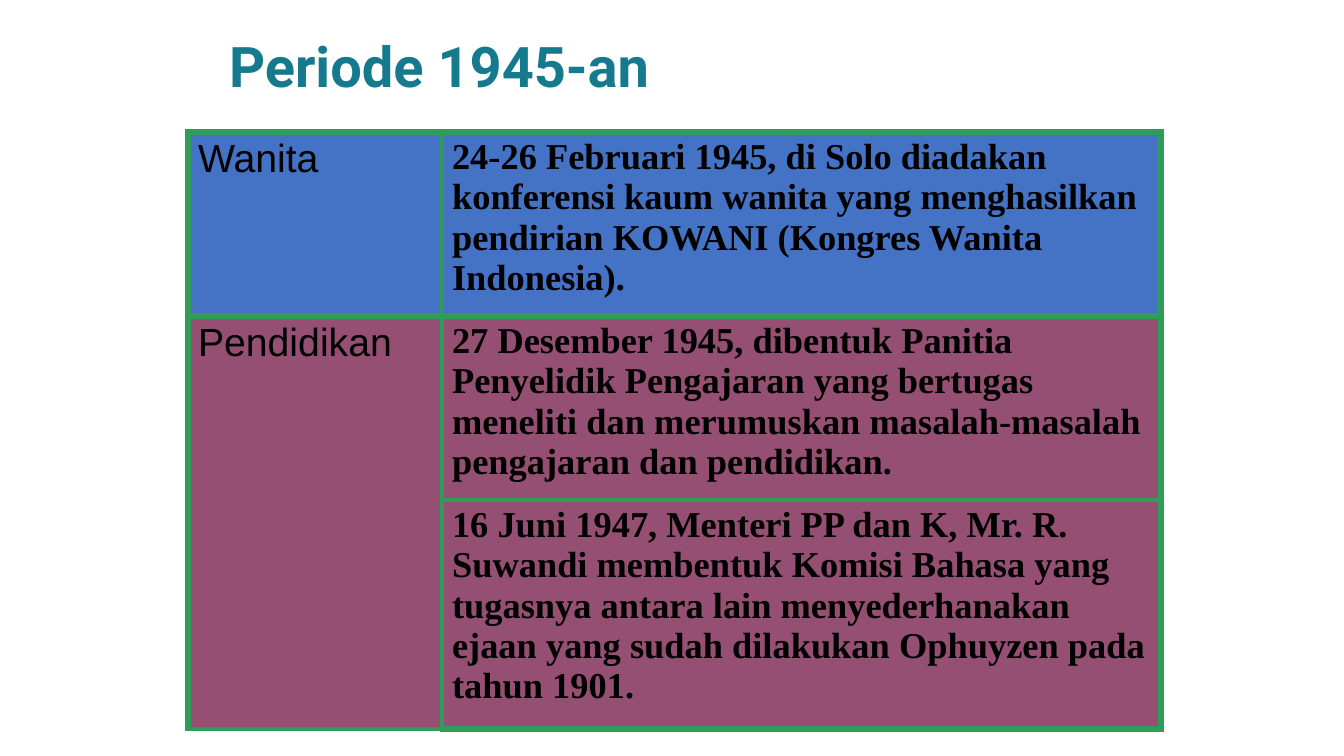
import pptx
import pptx.util
import pptx.dml.color
import pptx.enum.text
import pptx.oxml.ns
from lxml import etree

TITLE = "Periode 1945-an"
ROWS = [
    ("Wanita",
     "24-26 Februari 1945, di Solo diadakan konferensi kaum wanita yang menghasilkan "
     "pendirian KOWANI (Kongres Wanita Indonesia).", "blue"),
    ("Pendidikan",
     "27 Desember 1945, dibentuk Panitia Penyelidik Pengajaran yang bertugas meneliti "
     "dan merumuskan masalah-masalah pengajaran dan pendidikan.", "plum"),
    ("",
     "16 Juni 1947, Menteri PP dan K, Mr. R. Suwandi membentuk Komisi Bahasa yang "
     "tugasnya antara lain menyederhanakan ejaan yang sudah dilakukan Ophuyzen pada "
     "tahun 1901.", "plum"),
]
COLORS = {"title": "167A8E", "text": "000000", "border": "2F9D59",
          "blue": "4472C4", "plum": "954F72"}
COLUMN_FONTS = [("Arial", 28, False), ("Times New Roman", 26, True)]
COLUMN_WIDTHS = [254, 719]
ROW_HEIGHTS = [184, 184, 229]
THICK, THIN = 4.5, 3


def px(n):
    return pptx.util.Emu(round(n * 914400 / 100.8))


def rgb(name):
    return pptx.dml.color.RGBColor.from_string(COLORS[name])


def add_run(p, text, font, size, bold, color):
    r = p.add_run()
    r.text = text
    r.font.name = font
    r.font.size = pptx.util.Pt(size)
    r.font.bold = bold
    r.font.color.rgb = rgb(color)


def set_borders(cell, widths):
    tcPr = cell._tc.get_or_add_tcPr()
    qn = pptx.oxml.ns.qn
    for i, (side, width) in enumerate(widths.items()):
        ln = etree.Element(qn("a:ln" + side), w=str(pptx.util.Pt(width)))
        fill = etree.SubElement(ln, qn("a:solidFill"))
        etree.SubElement(fill, qn("a:srgbClr"), val=COLORS["border"])
        tcPr.insert(i, ln)


prs = pptx.Presentation()
prs.slide_width, prs.slide_height = px(1344), px(756)
s = prs.slides.add_slide(prs.slide_layouts[5])

title = s.shapes.title
title.left, title.top, title.width, title.height = px(219), px(30), px(907), px(78)
tf = title.text_frame
tf.word_wrap = True
tf.vertical_anchor = pptx.enum.text.MSO_ANCHOR.MIDDLE
p = tf.paragraphs[0]
p.alignment = pptx.enum.text.PP_ALIGN.LEFT
p.line_spacing = 0.9
add_run(p, TITLE, "Roboto", 40, True, "title")

table = s.shapes.add_table(len(ROWS), len(COLUMN_WIDTHS), px(188), px(132),
                           px(sum(COLUMN_WIDTHS)), px(sum(ROW_HEIGHTS))).table
table.first_row = table.horz_banding = False
for column, width in zip(table.columns, COLUMN_WIDTHS):
    column.width = px(width)
for row, height in zip(table.rows, ROW_HEIGHTS):
    row.height = px(height)

for i, (topic, event, fill) in enumerate(ROWS):
    for j, text in enumerate((topic, event)):
        cell = table.cell(i, j)
        cell.fill.solid()
        cell.fill.fore_color.rgb = rgb(fill)
        set_borders(cell, {"L": THIN if j else THICK, "R": THICK if j else THIN,
                           "T": THIN if i == 2 else THICK,
                           "B": THIN if i == 1 else THICK})
        if text:
            add_run(cell.text_frame.paragraphs[0], text, *COLUMN_FONTS[j], "text")
table.cell(1, 0).merge(table.cell(2, 0))

prs.save("out.pptx")
